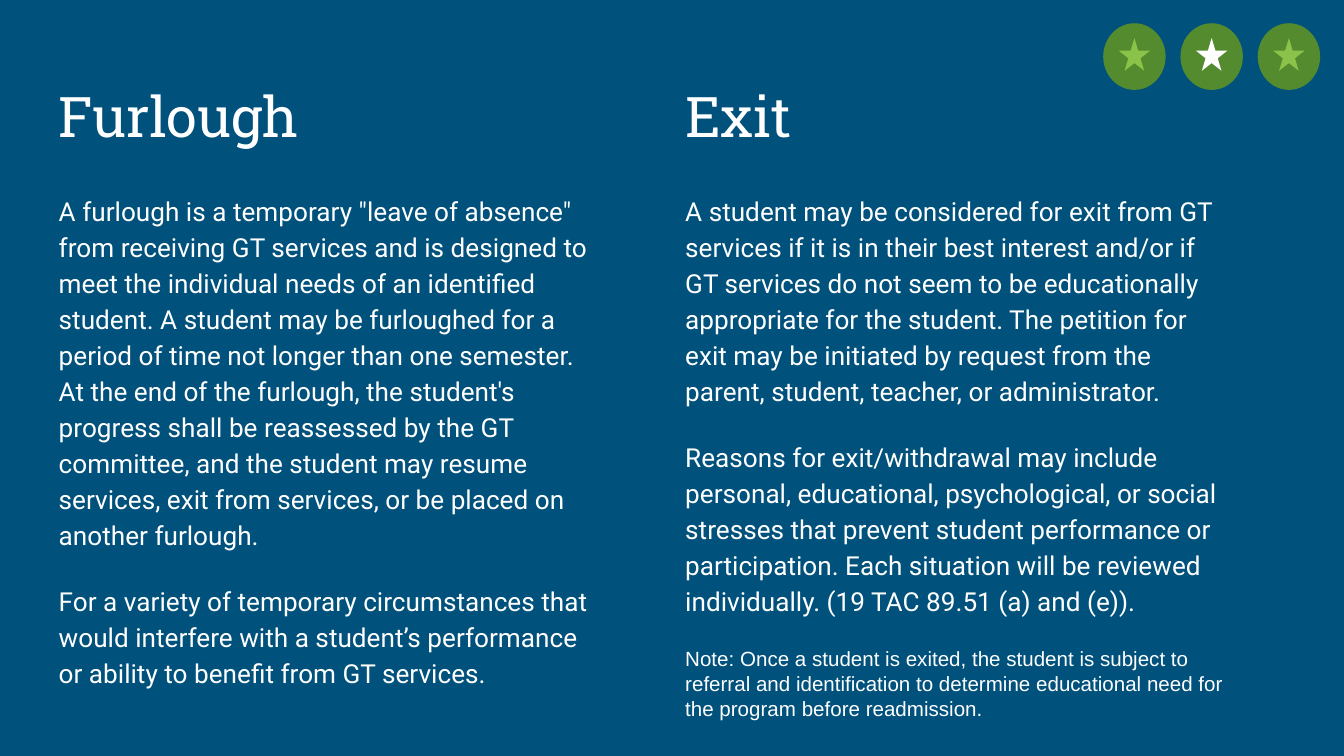
"""Build the slide comparing furlough and exit from GT services."""
import pptx
import pptx.dml.color
import pptx.enum.shapes
import pptx.enum.text
import pptx.oxml
import pptx.util
from pptx.util import Cm

BLUE = pptx.dml.color.RGBColor(0x00, 0x51, 0x7C)
WHITE = pptx.dml.color.RGBColor(0xFF, 0xFF, 0xFF)
DARK_GREEN = pptx.dml.color.RGBColor(0x55, 0x8B, 0x2F)
LIGHT_GREEN = pptx.dml.color.RGBColor(0x8B, 0xC3, 0x4A)

TITLE = {"name": "Roboto Slab", "size": pptx.util.Pt(30), "bold": False}
BODY = {"name": "Roboto", "size": pptx.util.Pt(14), "bold": False}
NOTE = {"name": "Arial", "size": pptx.util.Pt(11), "bold": False}

COLUMNS = [
    (0, 2, Cm(0.86), "Furlough", [
        ("A furlough is a temporary \"leave of absence\" from receiving GT services "
         "and is designed to meet the individual needs of an identified student. "
         "A student may be furloughed for a period of time not longer than one "
         "semester. At the end of the furlough, the student's progress shall be "
         "reassessed by the GT committee, and the student may resume services, exit "
         "from services, or be placed on another furlough.", BODY, 1.15),
        ("For a variety of temporary circumstances that would interfere with a "
         "student’s performance or ability to benefit from GT services.", BODY, 1.15),
    ]),
    (3, 4, Cm(12.7), "Exit", [
        ("A student may be considered for exit from GT services if it is in their "
         "best interest and/or if GT services do not seem to be educationally "
         "appropriate for the student. The petition for exit may be initiated by "
         "request from the parent, student, teacher, or administrator.", BODY, 1.15),
        ("Reasons for exit/withdrawal may include personal, educational, "
         "psychological, or social stresses that prevent student performance or "
         "participation. Each situation will be reviewed individually. "
         "(19 TAC 89.51 (a) and (e)).", BODY, 1.15),
        ("Note: Once a student is exited, the student is subject to referral and "
         "identification to determine educational need for the program before "
         "readmission.", NOTE, 1.0),
    ]),
]


def fill_placeholder(sp, left, top, height, anchor, paragraphs):
    """Place a placeholder and write its formatted paragraphs."""
    sp.left, sp.top, sp.width, sp.height = left, top, Cm(10.69), height
    tf = sp.text_frame
    frame = {"word_wrap": True, "vertical_anchor": anchor,
             "auto_size": pptx.enum.text.MSO_AUTO_SIZE.NONE}
    for side in ("left", "top", "right", "bottom"):
        frame["margin_" + side] = Cm(0.25)
    for key, value in frame.items():
        setattr(tf, key, value)
    for i, (text, font, spacing) in enumerate(paragraphs):
        p = tf.add_paragraph() if i else tf.paragraphs[0]
        layout = {"alignment": pptx.enum.text.PP_ALIGN.LEFT, "line_spacing": spacing,
                  "space_before": pptx.util.Pt(16 if i else 0)}
        for key, value in layout.items():
            setattr(p, key, value)
        pPr = p._p.get_or_add_pPr()
        pPr.set("marL", "0")
        pPr.set("indent", "0")
        pPr.append(pptx.oxml.parse_xml(
            '<a:buNone xmlns:a="http://schemas.openxmlformats.org/drawingml/2006/main"/>'))
        r = p.add_run()
        r.text = text
        for key, value in font.items():
            setattr(r.font, key, value)
        r.font.color.rgb = WHITE


prs = pptx.Presentation()
prs.slide_width, prs.slide_height = Cm(25.4), Cm(14.29)
s = prs.slides.add_slide(prs.slide_layouts[4])
s.background.fill.solid()
s.background.fill.fore_color.rgb = BLUE

ph = {sp.placeholder_format.idx: sp for sp in s.placeholders}
for title_idx, body_idx, left, title, paragraphs in COLUMNS:
    fill_placeholder(ph[title_idx], left, Cm(1.04), Cm(2.03),
                     pptx.enum.text.MSO_ANCHOR.BOTTOM, [(title, TITLE, 1.0)])
    fill_placeholder(ph[body_idx], left, Cm(3.35), Cm(9.6),
                     pptx.enum.text.MSO_ANCHOR.TOP, paragraphs)
ph[1].element.getparent().remove(ph[1].element)

SHAPE = pptx.enum.shapes.MSO_SHAPE
for i, star_color in enumerate((LIGHT_GREEN, WHITE, LIGHT_GREEN)):
    left = Cm(20.85 + 1.46 * i)
    badge = s.shapes.add_group_shape()
    for kind, x, y, w, h, color in (
            (SHAPE.OVAL, left, Cm(0.44), Cm(1.18), Cm(1.26), DARK_GREEN),
            (SHAPE.STAR_5_POINT, left + Cm(0.29), Cm(0.72), Cm(0.6), Cm(0.62), star_color)):
        sp = badge.shapes.add_shape(kind, x, y, w, h)
        sp.shadow.inherit = False
        sp.fill.solid()
        sp.fill.fore_color.rgb = color
        sp.line.fill.background()

prs.save("out.pptx")
